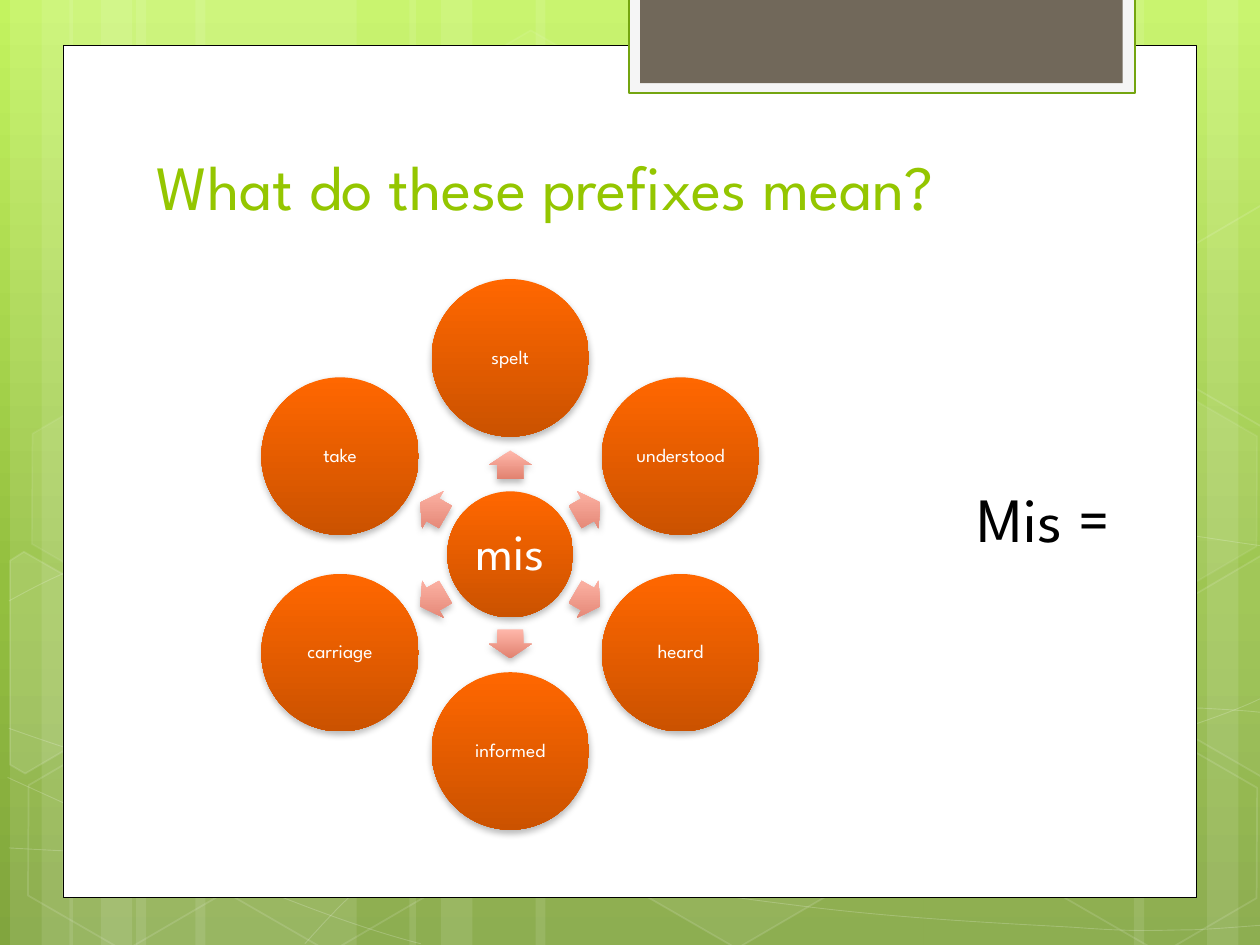
import copy
import math

import pptx
import pptx.dml.color
import pptx.enum.shapes
import pptx.enum.text
import pptx.oxml
import pptx.oxml.ns
import pptx.util

Inches = pptx.util.Inches
Pt = pptx.util.Pt
color = pptx.dml.color.RGBColor.from_string
qn = pptx.oxml.ns.qn
SHAPES = pptx.enum.shapes.MSO_SHAPE
FONT = "League Spartan"
SHADOW = (
    f'<a:effectLst {pptx.oxml.ns.nsdecls("a")}>'
    '<a:outerShdw blurRad="50800" dist="25400" dir="5400000" rotWithShape="0">'
    '<a:srgbClr val="000000"><a:alpha val="28000"/></a:srgbClr>'
    "</a:outerShdw></a:effectLst>"
)


def paint(shape, fill=None, fill_alpha=100, line=None, width=1, line_alpha=100):
    """Set fill and line; a pair of fill colours gives a vertical gradient with a shadow."""
    shape.shadow.inherit = False
    properties = shape._element.spPr
    if fill is None:
        shape.fill.background()
    elif isinstance(fill, tuple):
        shape.fill.gradient()
        shape.fill.gradient_angle = 270
        for stop, value in zip(shape.fill.gradient_stops, fill):
            stop.color.rgb = color(value)
        properties.find(qn("a:gradFill")).set("rotWithShape", "0")
        properties.replace(properties.find(qn("a:effectLst")), pptx.oxml.parse_xml(SHADOW))
    else:
        shape.fill.solid()
        shape.fill.fore_color.rgb = color(fill)
    if line is None:
        shape.line.fill.background()
    else:
        shape.line.color.rgb = color(line)
        shape.line.width = Pt(width)
    for parent, alpha in ((properties, fill_alpha), (properties.find(qn("a:ln")), line_alpha)):
        solid = parent.find(qn("a:solidFill"))
        if solid is not None and alpha < 100:
            solid[0].append(solid[0].makeelement(qn("a:alpha"), {"val": str(alpha * 1000)}))


def write(shape, text, size, value, align, anchor):
    frame = shape.text_frame
    frame.text = text
    frame.vertical_anchor = anchor
    paragraph = frame.paragraphs[0]
    paragraph.alignment = align
    font = paragraph.runs[0].font
    font.name, font.size, font.color.rgb = FONT, Pt(size), color(value)


presentation = pptx.Presentation()
presentation.slide_width = Inches(10)
presentation.slide_height = Inches(7.5)
slide = presentation.slides.add_slide(presentation.slide_layouts[5])
shapes = slide.shapes

# Green background
background = slide.background.fill
background.gradient()
background.gradient_angle = 270
stop_list = slide._element.find(".//" + qn("p:bgPr")).find(".//" + qn("a:gsLst"))
stop_list.insert(1, copy.deepcopy(stop_list[0]))
stops = ((0, "C3F35F"), (0.62, "93BF3F"), (1, "81A53E"))
for stop, (position, value) in zip(background.gradient_stops, stops):
    stop.position = position
    stop.color.rgb = color(value)

# Vertical stripes: left, width
stripes = [
    (1.08, 1.75), (0.08, 0.5), (0.33, 0.83), (1.55, 1.75), (0.55, 0.5), (0.8, 0.83),
    (7.33, 1.75), (9.58, 0.5), (9, 0.83), (4.25, 3.08), (3.25, 0.5), (3.5, 0.83),
]
for left, width in stripes:
    stripe = shapes.add_shape(SHAPES.RECTANGLE, Inches(left), 0, Inches(width), Inches(7.5))
    paint(stripe, "FFFFFF", 10)

# Thin waves in hundredths of an inch: chains of Bezier segments sharing their end points
waves = [
    [(7, 673), (61, 676), (115, 679), (190, 678), (265, 677), (358, 675), (458, 665),
     (558, 655), (700, 636), (792, 617), (883, 598), (977, 568), (1007, 551)],
    [(7, 477), (36, 461), (65, 446), (121, 431), (178, 416), (259, 394), (347, 387),
     (436, 380), (544, 379), (654, 387), (764, 395), (947, 426), (1007, 434)],
    [(6, 617), (127, 672), (247, 727), (334, 749)],
    [(7, 578), (38, 589), (70, 600), (128, 616), (186, 631), (273, 656), (357, 673),
     (440, 690), (545, 708), (628, 718), (711, 729), (800, 733), (853, 736),
     (905, 740), (919, 738), (945, 738), (971, 737), (989, 735), (1007, 734)],
    [(242, 749), (260, 729), (278, 709), (302, 691), (326, 673), (360, 653), (388, 639),
     (416, 625), (433, 619), (470, 609), (506, 599), (573, 585), (608, 578),
     (644, 571), (649, 571), (680, 569), (711, 566), (760, 563), (794, 562),
     (829, 561), (886, 562), (886, 562), (908, 562), (931, 562), (953, 562),
     (971, 563), (988, 564), (997, 565), (1006, 566), (1003, 565), (1006, 566)],
]
for wave in waves:
    builder = shapes.build_freeform(*wave[0], scale=Inches(0.01))
    builder.add_line_segments(wave[1:], close=False)
    curve = builder.convert_to_shape()
    outline = curve._element.find(".//" + qn("a:path"))
    segments = outline.findall(qn("a:lnTo"))
    for start in range(0, len(segments), 3):
        bezier = outline.makeelement(qn("a:cubicBezTo"), {})
        outline.append(bezier)
        for segment in segments[start:start + 3]:
            bezier.append(segment[0])
            outline.remove(segment)
    paint(curve, line="FFFFFF", width=0.5, line_alpha=20)

# Hexagons: left, top, fill opacity (0 is no fill), line opacity
hexagons = [
    (3.34, 0.36, 4, 8), (4.97, 5.89, 6, 12), (0.11, 5.91, 0, 12), (0.14, 3.12, 7, 8),
    (1.74, 5.92, 0, 12), (7.53, 4.53, 10, 12), (8.34, 5.93, 0, 12), (8.34, 3.14, 7, 8),
]
for left, top, fill_alpha, line_alpha in hexagons:
    hexagon = shapes.add_shape(SHAPES.HEXAGON, Inches(left), Inches(top), Inches(1.75), Inches(1.52))
    hexagon.adjustments[0] = 0.285
    hexagon.rotation = 30
    paint(hexagon, "FFFFFF" if fill_alpha else None, fill_alpha, "FFFFFF", 1, line_alpha)

# Hexagons cut off by the slide edge, in hundredths of an inch
cut_hexagons = [
    (10, [(8, 445), (19, 438), (96, 482), (95, 570), (20, 614), (8, 607)]),
    (4, [(926, 485), (1001, 441), (1009, 446), (1009, 613), (1002, 617), (926, 573)]),
    (0, [(926, 207), (1001, 163), (1010, 168), (1009, 335), (1002, 339), (926, 295)]),
]
for fill_alpha, corners in cut_hexagons:
    builder = shapes.build_freeform(*corners[0], scale=Inches(0.01))
    builder.add_line_segments(corners[1:], close=True)
    paint(builder.convert_to_shape(), "FFFFFF" if fill_alpha else None, fill_alpha, "FFFFFF", 1, 12)

# White page and the tab at its top
panels = [
    (0.5, 0.36, 9, 6.76, "FFFFFF", "000000", 0.5),
    (4.99, -0.02, 4.02, 0.76, "F5F5F5", "74A510", 1.25),
    (5.08, -0.02, 3.83, 0.68, "71685A", None, 0),
]
for left, top, width, height, fill, line, line_width in panels:
    panel = shapes.add_shape(SHAPES.RECTANGLE, Inches(left), Inches(top), Inches(width), Inches(height))
    paint(panel, fill, line=line, width=line_width)

ALIGN = pptx.enum.text.PP_ALIGN
ANCHOR = pptx.enum.text.MSO_ANCHOR
title = shapes.title
title.left, title.top, title.width, title.height = map(Inches, (1.14, 0.57, 7.68, 1.25))
write(title, "What do these prefixes mean?", 36, "94C600", ALIGN.LEFT, ANCHOR.BOTTOM)
title.text_frame.auto_size = pptx.enum.text.MSO_AUTO_SIZE.NONE
shapes._spTree.append(title._element)  # in front of the page

# Prefix in the hub, word endings clockwise from the top
CENTER_X, CENTER_Y = 4.05, 4.4
circles = [("mis", 0, 0, 1, 29)]
for index, ending in enumerate(["spelt", "understood", "heard", "informed", "carriage", "take"]):
    angle = index * 60 - 90
    across, down = math.cos(math.radians(angle)), math.sin(math.radians(angle))
    circles.append((ending, 1.56 * across, 1.56 * down, 1.25, 11))
    arrow = shapes.add_shape(
        SHAPES.RIGHT_ARROW,
        Inches(CENTER_X + 0.71 * across - 0.115), Inches(CENTER_Y + 0.71 * down - 0.17),
        Inches(0.23), Inches(0.34),
    )
    arrow.adjustments[0] = 0.6
    arrow.rotation = angle % 360
    paint(arrow, ("FFB8AB", "E28270"))

for text, across, down, size, font_size in circles:
    circle = shapes.add_shape(
        SHAPES.OVAL, Inches(CENTER_X + across - size / 2), Inches(CENTER_Y + down - size / 2),
        Inches(size), Inches(size),
    )
    paint(circle, ("FF6700", "CB5200"))
    write(circle, text, font_size, "FFFFFF", ALIGN.CENTER, ANCHOR.MIDDLE)
    frame = circle.text_frame
    frame.margin_left = frame.margin_right = frame.margin_top = frame.margin_bottom = Inches(0.02)
    frame.paragraphs[0].line_spacing = 0.9

meaning = shapes.add_textbox(Inches(7.66), Inches(3.76), Inches(1.41), Inches(0.71))
write(meaning, "Mis =", 36, "000000", ALIGN.LEFT, ANCHOR.TOP)
meaning.text_frame.word_wrap = False

presentation.save("out.pptx")
